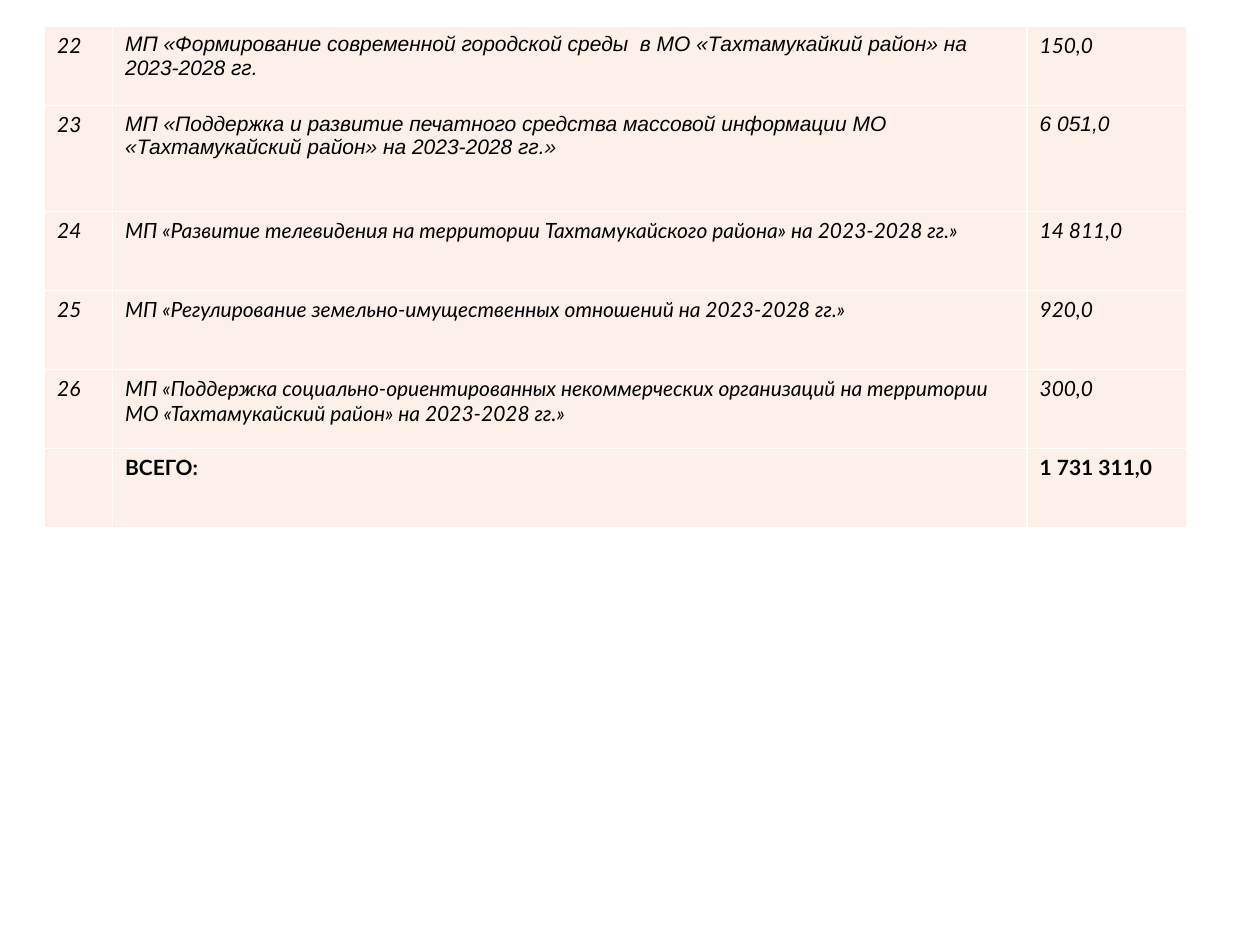
from pptx import Presentation
from pptx import util as u
from pptx.dml.color import RGBColor
from pptx.oxml import parse_xml
from pptx.oxml.ns import nsdecls

Pt = u.Pt

PROGRAMMES = [
    ("22", "МП «Формирование современной городской среды  в МО «Тахтамукайкий район» на 2023-2028 гг.", "150,0"),
    ("23", "МП «Поддержка и развитие печатного средства массовой информации МО «Тахтамукайский район» на 2023-2028 гг.»", "6 051,0"),
    ("24", "МП «Развитие телевидения на территории Тахтамукайского района» на 2023-2028 гг.»", "14 811,0"),
    ("25", "МП «Регулирование земельно-имущественных отношений на 2023-2028 гг.»", "920,0"),
    ("26", "МП «Поддержка социально-ориентированных некоммерческих организаций на территории МО «Тахтамукайский район» на 2023-2028 гг.»", "300,0"),
]
TOTAL = ("", "ВСЕГО:", "1 731 311,0")
ROWS = PROGRAMMES + [TOTAL]
ARIAL_CELLS = {(0, 1), (1, 1), (1, 2)}

LEFT, TOP = 25.5, 15.2
COLUMN_WIDTHS = [38.8, 522.6, 91.5]
ROW_HEIGHTS = [45.2, 60.5, 45.2, 45.2, 45.2, 45.2]


def color(value):
    return RGBColor.from_string(value)


def write(cell, text, font="Lato", size=12, bold=False, italic=False, ink="000000"):
    run = cell.text_frame.paragraphs[0].add_run()
    run.text = text
    run.font.name = font
    run.font.size = Pt(size)
    run.font.bold = bold
    run.font.italic = italic
    run.font.color.rgb = color(ink)


def add_borders(cell, line="FFFFFF", width=1):
    properties = cell._tc.get_or_add_tcPr()
    for index, side in enumerate(("lnL", "lnR", "lnT", "lnB")):
        border = parse_xml(
            f'<a:{side} {nsdecls("a")} w="{Pt(width)}"><a:solidFill>'
            f'<a:srgbClr val="{line}"/></a:solidFill></a:{side}>'
        )
        properties.insert(index, border)


def add_programme_table(slide):
    frame = slide.shapes.add_table(
        len(ROWS), len(COLUMN_WIDTHS), Pt(LEFT), Pt(TOP),
        Pt(sum(COLUMN_WIDTHS)), Pt(sum(ROW_HEIGHTS)),
    )
    table = frame.table
    table.first_row = False
    table.horz_banding = False
    for column, width in zip(table.columns, COLUMN_WIDTHS):
        column.width = Pt(width)
    for row, height in zip(table.rows, ROW_HEIGHTS):
        row.height = Pt(height)
    for i, values in enumerate(ROWS):
        is_total = values is TOTAL
        for j, value in enumerate(values):
            cell = table.cell(i, j)
            cell.fill.solid()
            cell.fill.fore_color.rgb = color("FCF0E8")
            add_borders(cell)
            if value:
                font = "Arial" if (i, j) in ARIAL_CELLS else "Lato"
                write(cell, value, font=font, bold=is_total, italic=not is_total)


def main():
    presentation = Presentation()
    presentation.slide_width = Pt(720)
    presentation.slide_height = Pt(540)
    slide = presentation.slides.add_slide(presentation.slide_layouts[6])
    add_programme_table(slide)
    presentation.save("out.pptx")


if __name__ == "__main__":
    main()
